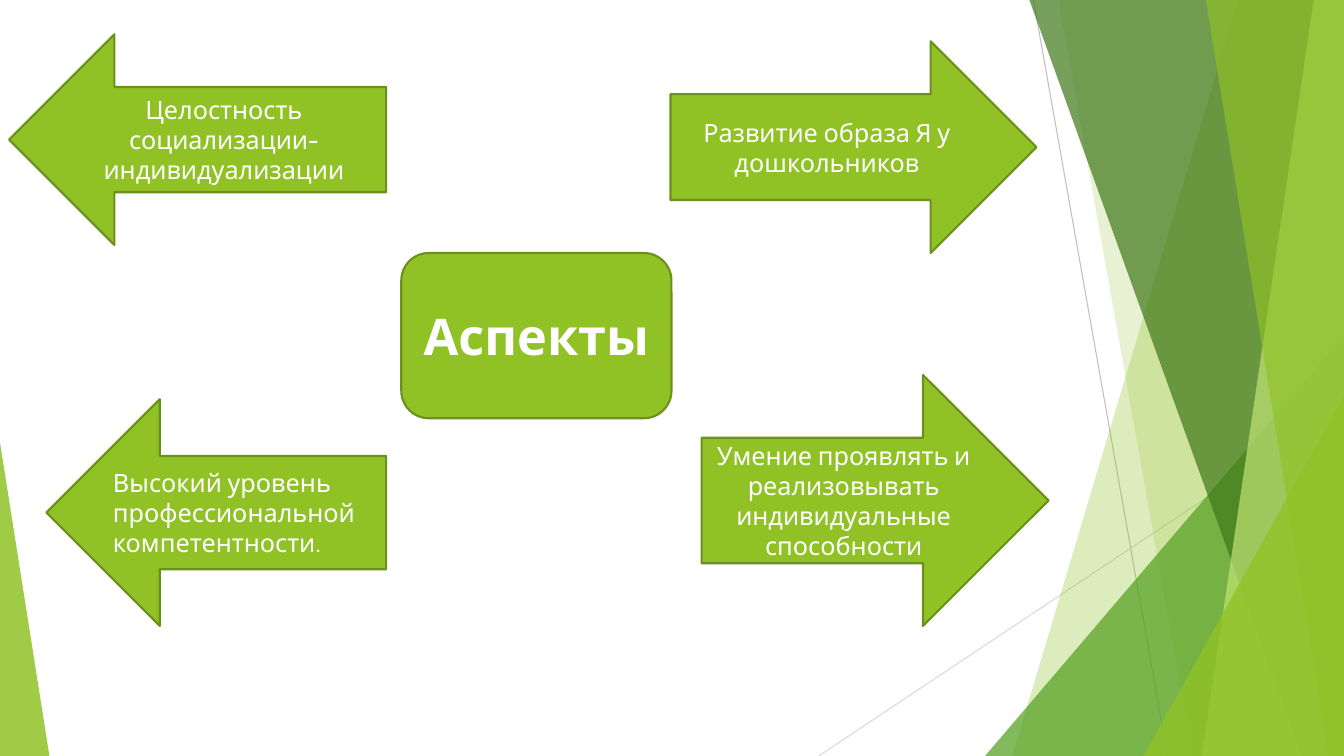
from lxml import etree
from pptx import Presentation
from pptx.dml.color import RGBColor
from pptx.enum import shapes, text
from pptx.oxml import ns
from pptx.util import Inches, Pt

WIDTH, HEIGHT = 13.33, 7.5
FONT = "Cabin"
WHITE = RGBColor(0xFF, 0xFF, 0xFF)
LIME = RGBColor(0x90, 0xC2, 0x26)
OLIVE = RGBColor(0x6B, 0x90, 0x1C)
GREEN = RGBColor(0x54, 0xA0, 0x21)
FOREST = RGBColor(0x3F, 0x78, 0x19)
PALE_LIME = RGBColor(0xC0, 0xE4, 0x74)
GREY = RGBColor(0xBF, 0xBF, 0xBF)
LIGHT_GREY = RGBColor(0xD9, 0xD9, 0xD9)

SHAPE = shapes.MSO_SHAPE
CENTER, LEFT = text.PP_ALIGN.CENTER, text.PP_ALIGN.LEFT


def fill_facet(sp, color, opacity):
    """Fill a borderless shape; opacity is a percentage."""
    sp.shadow.inherit = False
    sp.fill.solid()
    sp.fill.fore_color.rgb = color
    clr = sp.fill._xPr.find(ns.qn("a:solidFill"))[0]
    etree.SubElement(clr, ns.qn("a:alpha"), val=str(opacity * 1000))
    sp.line.fill.background()


def add_hairline(s, start, end, color):
    ln = s.shapes.add_connector(shapes.MSO_CONNECTOR.STRAIGHT,
                                *map(Inches, start + end))
    ln.line.color.rgb = color
    ln.line.width = Pt(0.75)
    etree.SubElement(ln._element.spPr, ns.qn("a:effectLst"))


def add_band(s, top_x, bottom_x, color, opacity):
    """Full-height facet between a slanted left edge and the slide's right edge."""
    fb = s.shapes.build_freeform(Inches(top_x), 0)
    corners = [(WIDTH, 0), (WIDTH, HEIGHT), (bottom_x, HEIGHT)]
    fb.add_line_segments([(Inches(x), Inches(y)) for x, y in corners])
    fill_facet(fb.convert_to_shape(), color, opacity)


def add_corner(s, left, width, height, apex, color, opacity):
    """Triangle standing on the bottom edge; apex is 0 (left) or 1 (right)."""
    sp = s.shapes.add_shape(SHAPE.ISOSCELES_TRIANGLE, Inches(left),
                            Inches(HEIGHT - height), Inches(width), Inches(height))
    sp.adjustments[0] = apex
    fill_facet(sp, color, opacity)


def draw_backdrop(s):
    add_hairline(s, (10.25, 0), (11.58, HEIGHT), GREY)
    add_hairline(s, (WIDTH, 4.03), (8.12, HEIGHT), LIGHT_GREY)
    add_band(s, 12.28, 10.04, LIME, 30)
    add_band(s, 10.5, 11.83, LIME, 20)
    add_corner(s, 9.77, 3.56, 4.17, 1, GREEN, 72)
    add_band(s, 10.21, 12.91, FOREST, 70)
    add_band(s, 13.03, 11.92, PALE_LIME, 70)
    add_band(s, 11.96, 13.18, LIME, 65)
    add_corner(s, 11.34, 1.99, 3.57, 1, LIME, 80)
    add_corner(s, 0, 0.49, 3.11, 0, LIME, 85)


def write(tf, words, size=18, bold=False, align=CENTER):
    tf.word_wrap = True
    tf.vertical_anchor = text.MSO_ANCHOR.MIDDLE
    p = tf.paragraphs[0]
    p.alignment = align
    r = p.add_run()
    r.text = words
    r.font.name, r.font.size, r.font.bold = FONT, Pt(size), bold
    r.font.color.rgb = WHITE


def add_node(s, kind, box, words, **fmt):
    sp = s.shapes.add_shape(kind, *map(Inches, box))
    sp.shadow.inherit = False
    sp.fill.solid()
    sp.fill.fore_color.rgb = LIME
    sp.line.color.rgb = OLIVE
    sp.line.width = Pt(1.5)
    write(sp.text_frame, words, **fmt)


def draw_aspects(s):
    add_node(s, SHAPE.FLOWCHART_ALTERNATE_PROCESS, (3.98, 2.51, 2.68, 1.64),
             "Аспекты", size=36, bold=True)
    add_node(s, SHAPE.RIGHT_ARROW, (6.65, 0.41, 3.63, 2.1),
             "Развитие образа Я у дошкольников")
    add_node(s, SHAPE.LEFT_ARROW, (0.09, 0.34, 3.74, 2.09),
             "Целостность социализации- индивидуализации")
    add_node(s, SHAPE.RIGHT_ARROW, (6.96, 3.72, 3.44, 2.49),
             "Умение проявлять и реализовывать индивидуальные способности")
    add_node(s, SHAPE.LEFT_ARROW, (0.46, 3.96, 3.37, 2.25),
             "Высокий уровень профессиональной компетентности.", align=LEFT)


def main():
    prs = Presentation()
    prs.slide_width, prs.slide_height = Inches(WIDTH), Inches(HEIGHT)
    s = prs.slides.add_slide(prs.slide_layouts[6])
    draw_backdrop(s)
    draw_aspects(s)
    prs.save("out.pptx")


if __name__ == "__main__":
    main()
